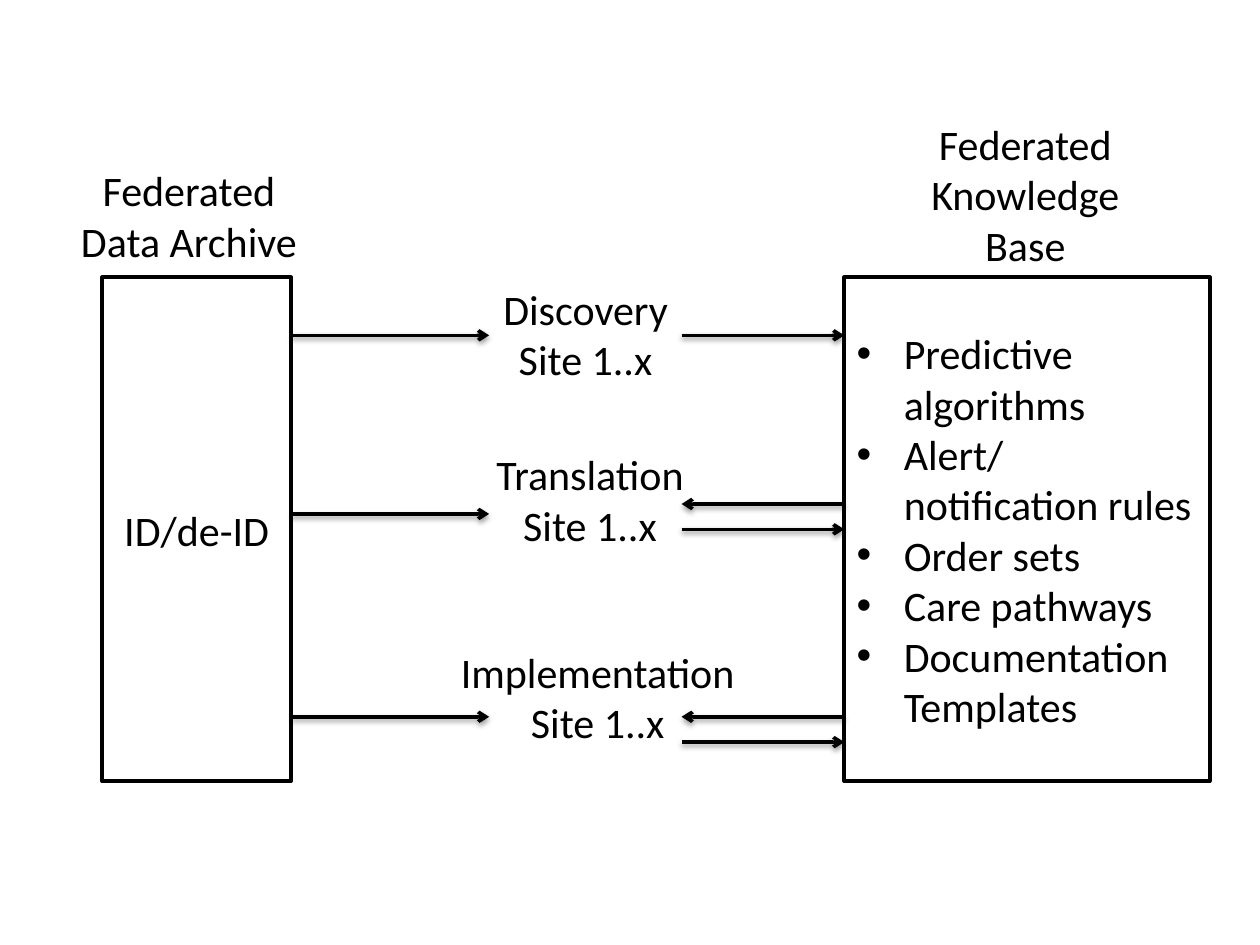
from dataclasses import dataclass
from lxml.etree import SubElement as Sub
from pptx import Presentation
from pptx.dml.color import RGBColor as Rgb
from pptx.enum.shapes import MSO_CONNECTOR as Link, MSO_SHAPE as Kind
from pptx.enum.text import MSO_ANCHOR as Anchor, MSO_AUTO_SIZE as Fit, PP_ALIGN as Align
from pptx.oxml.ns import qn
from pptx.util import Cm, Pt


@dataclass
class Theme:
    ink: Rgb = Rgb(0, 0, 0)
    paper: Rgb = Rgb(255, 255, 255)
    font: str = "Calibri"
    size: Pt = Pt(24)
    line: Pt = Pt(2)


theme = Theme()
deck = Presentation()
deck.slide_width, deck.slide_height = Cm(25.4), Cm(19.05)
slide = deck.slides.add_slide(deck.slide_layouts[6])
shapes = slide.shapes


def write(shape, text, wrap=True, bullet=False):
    frame = shape.text_frame
    frame.text = text
    frame.word_wrap = wrap
    for para in frame.paragraphs:
        para.alignment = Align.LEFT if bullet else Align.CENTER
        if bullet:
            props = para._p.get_or_add_pPr()
            props.set("marL", str(Cm(0.95)))
            props.set("indent", str(-Cm(0.95)))
            Sub(props, qn("a:buFont"), typeface="Arial")
            Sub(props, qn("a:buChar"), char="•")
        for run in para.runs:
            run.font.name = theme.font
            run.font.size = theme.size
            run.font.color.rgb = theme.ink


def arrow(start, end, y):
    link = shapes.add_connector(Link.STRAIGHT, Cm(start), Cm(y), Cm(end), Cm(y))
    link.line.color.rgb = theme.ink
    link.line.width = theme.line
    props = link._element.spPr
    Sub(props.find(qn("a:ln")), qn("a:tailEnd"), type="arrow")
    glow = Sub(Sub(props, qn("a:effectLst")), qn("a:outerShdw"),
               blurRad=str(Pt(3.1)), dist=str(Pt(1.6)), dir="5400000", rotWithShape="0")
    tint = Sub(glow, qn("a:srgbClr"), val=str(theme.ink))
    Sub(tint, qn("a:alpha"), val="38000")
    return link


top, high = 5.59, 10.16
middle = top + high / 2
items = "\n".join([
    "Predictive algorithms",
    "Alert/notification rules",
    "Order sets",
    "Care pathways",
    "Documentation Templates",
])

boxes = []
for left, wide, text, bullet in [
    (2.06, 3.81, "ID/de-ID", False),
    (17.02, 7.37, items, True),
]:
    box = shapes.add_shape(Kind.RECTANGLE, Cm(left), Cm(top), Cm(wide), Cm(high))
    box.shadow.inherit = False
    box.fill.solid()
    box.fill.fore_color.rgb = theme.paper
    box.line.color.rgb = theme.ink
    box.line.width = theme.line
    box.text_frame.vertical_anchor = Anchor.MIDDLE
    write(box, text, bullet=bullet)
    boxes.append(box)
archive, base = boxes

for left, y, wide, tall, text, wrap in [
    (1.12, 3.2, 5.38, 2.31, "Federated Data Archive", True),
    (17.98, 2.26, 5.38, 3.33, "Federated Knowledge Base", True),
    (9.86, 5.59, 3.89, 2.31, "Discovery\nSite 1..x", False),
    (9.7, 8.92, 4.39, 2.31, "Translation\nSite 1..x", False),
    (8.99, 12.9, 6.12, 2.31, "Implementation\nSite 1..x", False),
]:
    label = shapes.add_textbox(Cm(left), Cm(y), Cm(wide), Cm(tall))
    write(label, text, wrap)
    label.text_frame.auto_size = Fit.SHAPE_TO_FIT_TEXT

source, near, far, target = 5.87, 9.86, 13.74, 17.02
for feed, send, back in [
    (6.76, 6.76, None),
    (10.36, middle, 10.16),
    (14.45, 14.96, 14.45),
]:
    arrow(source, near, feed)
    link = arrow(far, target, send)
    if send == middle:
        link.end_connect(base, 1)
    if back:
        arrow(target, far, back)

deck.save("out.pptx")
